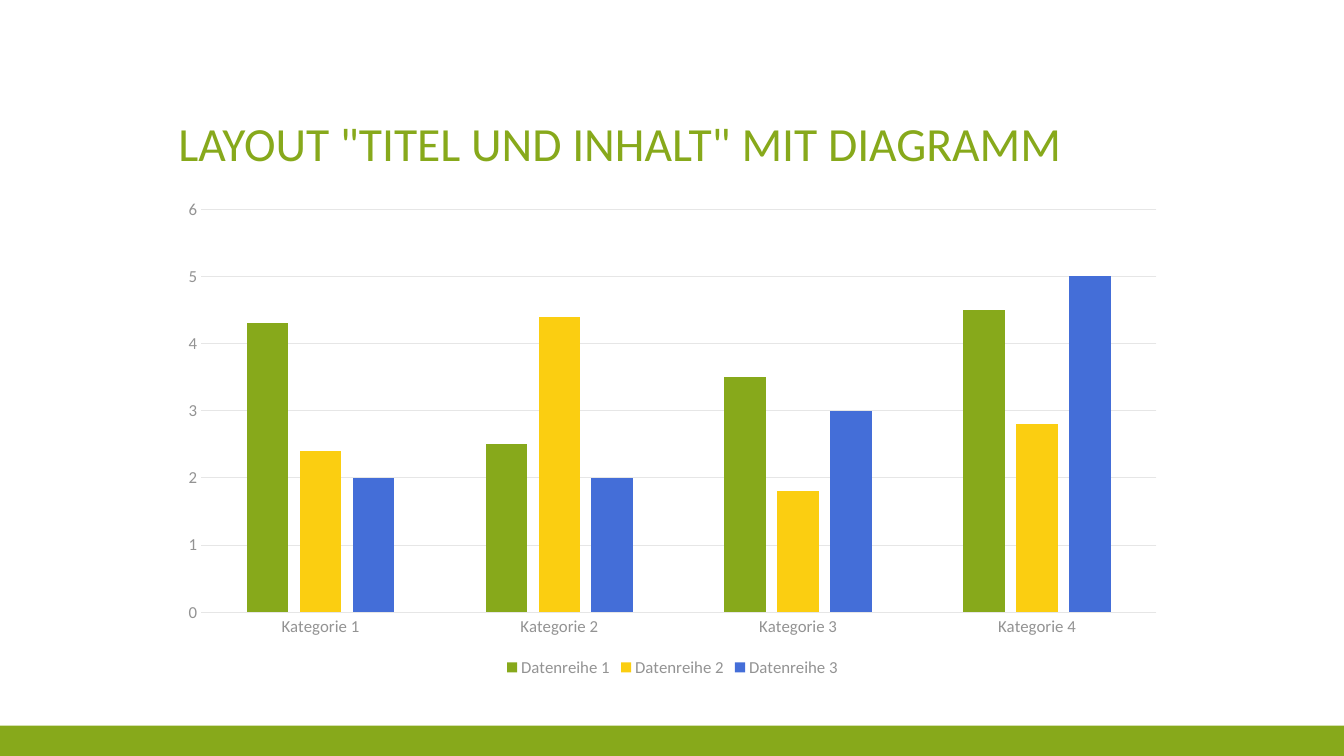
from pptx import Presentation
from pptx.chart.data import CategoryChartData
from pptx.dml.color import RGBColor
from pptx.enum.chart import XL_CHART_TYPE, XL_LEGEND_POSITION, XL_TICK_MARK
from pptx.enum.shapes import MSO_SHAPE
from pptx.enum.text import MSO_ANCHOR, MSO_AUTO_SIZE, PP_ALIGN
from pptx.util import Inches, Pt

COLUMN = XL_CHART_TYPE.COLUMN_CLUSTERED
BOTTOM = XL_LEGEND_POSITION.BOTTOM
NO_TICK = XL_TICK_MARK.NONE
RECT = MSO_SHAPE.RECTANGLE
ANCHOR_BOTTOM = MSO_ANCHOR.BOTTOM
NO_AUTOFIT = MSO_AUTO_SIZE.NONE
LEFT = PP_ALIGN.LEFT

FONT = "Calibri"
COLORS = {
    "green": "87A91B",
    "yellow": "FBCE11",
    "blue": "446ED8",
    "text": "595959",
    "label": "939393",
    "grid": "E6E6E6",
}
CATEGORIES = [f"Kategorie {i}" for i in range(1, 5)]
SERIES = [
    ("Datenreihe 1", (4.3, 2.5, 3.5, 4.5), "green"),
    ("Datenreihe 2", (2.4, 4.4, 1.8, 2.8), "yellow"),
    ("Datenreihe 3", (2, 2, 3, 5), "blue"),
]


def rgb(name):
    """Return the named colour."""
    return RGBColor.from_string(COLORS[name])


def set_font(font, size, color):
    """Format a font."""
    font.name = FONT
    font.size = Pt(size)
    font.bold = False
    font.color.rgb = rgb(color)


def set_text(tf, text, size=12, color="text", spacing=1.0, anchor=ANCHOR_BOTTOM):
    """Write one formatted paragraph into a text frame."""
    tf.word_wrap = True
    tf.auto_size = NO_AUTOFIT
    tf.vertical_anchor = anchor
    p = tf.paragraphs[0]
    p.alignment = LEFT
    p.line_spacing = spacing
    r = p.add_run()
    r.text = text
    set_font(r.font, size, color)


def set_line(line, color):
    """Format a thin chart line."""
    line.color.rgb = rgb(color)
    line.width = Pt(0.75)


def add_footer_bar(s, x, y, w, h):
    """Draw the coloured bar along the slide's lower edge."""
    sp = s.shapes.add_shape(RECT, Inches(x), Inches(y), Inches(w), Inches(h))
    sp.shadow.inherit = False
    sp.fill.solid()
    sp.fill.fore_color.rgb = rgb("green")
    sp.line.fill.background()


def add_title(s, text, x, y, w, h):
    """Place and fill the title placeholder."""
    sp = s.shapes.title
    sp.left, sp.top, sp.width, sp.height = map(Inches, (x, y, w, h))
    set_text(sp.text_frame, text, size=34, color="green", spacing=0.9)


def add_column_chart(s, x, y, w, h):
    """Add the clustered column chart."""
    data = CategoryChartData()
    data.categories = CATEGORIES
    for name, values, _ in SERIES:
        data.add_series(name, values)
    chart = s.shapes.add_chart(
        COLUMN, Inches(x), Inches(y), Inches(w), Inches(h), data
    ).chart
    set_font(chart.font, 10, "text")
    chart.has_title = False
    chart.has_legend = True
    chart.legend.position = BOTTOM
    chart.legend.include_in_layout = False
    set_font(chart.legend.font, 12, "label")

    for axis in (chart.category_axis, chart.value_axis):
        axis.major_tick_mark = NO_TICK
        axis.minor_tick_mark = NO_TICK
        set_font(axis.tick_labels.font, 12, "label")
    set_line(chart.category_axis.format.line, "grid")
    axis = chart.value_axis
    axis.minimum_scale, axis.maximum_scale, axis.major_unit = 0, 6, 1
    axis.format.line.fill.background()
    set_line(axis.major_gridlines.format.line, "grid")

    plot = chart.plots[0]
    plot.gap_width = 219
    plot.overlap = -27
    plot.vary_by_categories = False
    for series, (_, _, color) in zip(plot.series, SERIES):
        series.format.fill.solid()
        series.format.fill.fore_color.rgb = rgb(color)


def main():
    """Build and save the slide."""
    prs = Presentation()
    prs.slide_width, prs.slide_height = Inches(13.33), Inches(7.5)
    s = prs.slides.add_slide(prs.slide_layouts[5])
    add_footer_bar(s, 0, 7.2, 13.33, 0.3)
    add_title(s, 'LAYOUT "TITEL UND INHALT" MIT DIAGRAMM', 1.67, 0.5, 10, 1.25)
    add_column_chart(s, 1.67, 1.88, 10, 4.88)
    prs.save("out.pptx")


if __name__ == "__main__":
    main()
